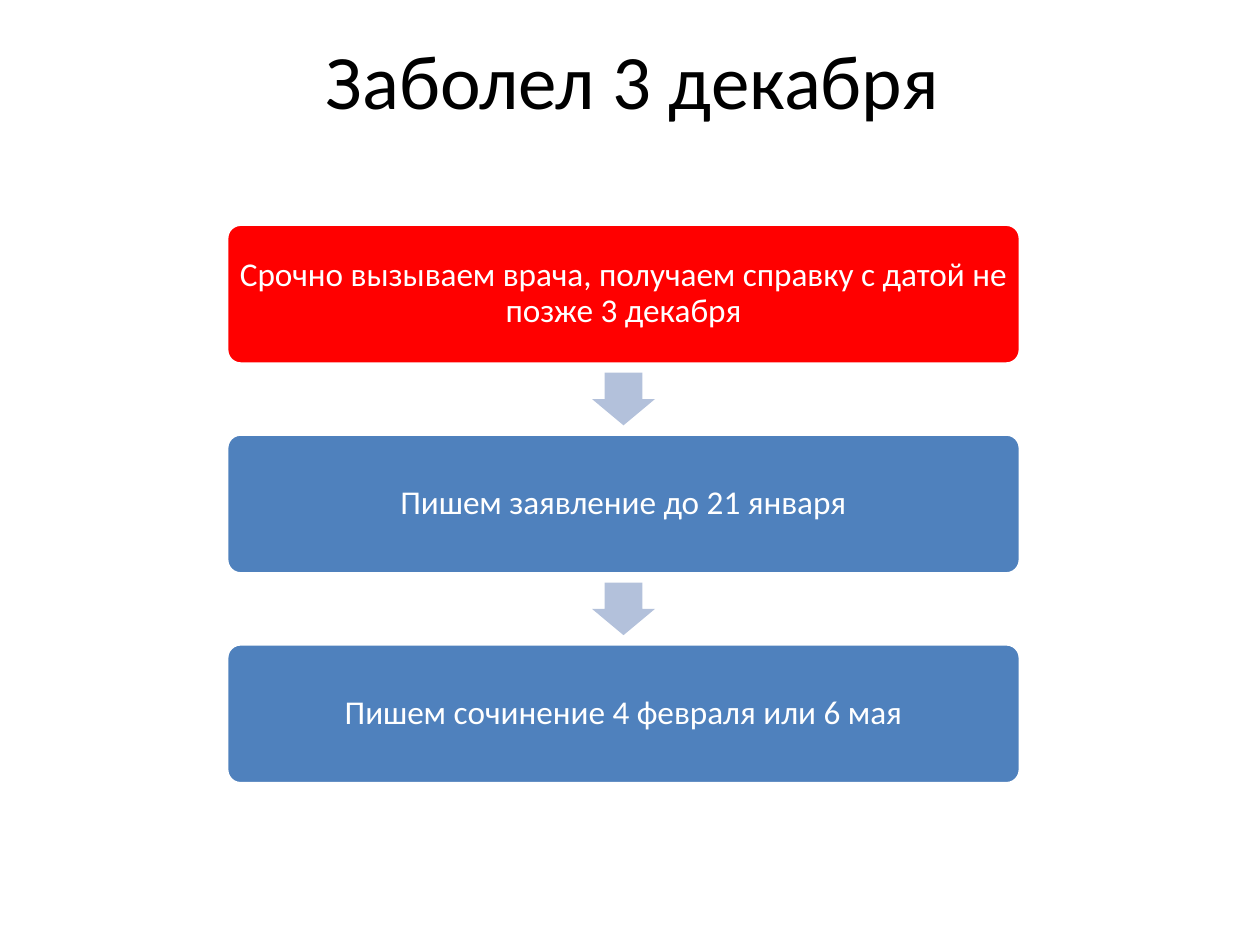
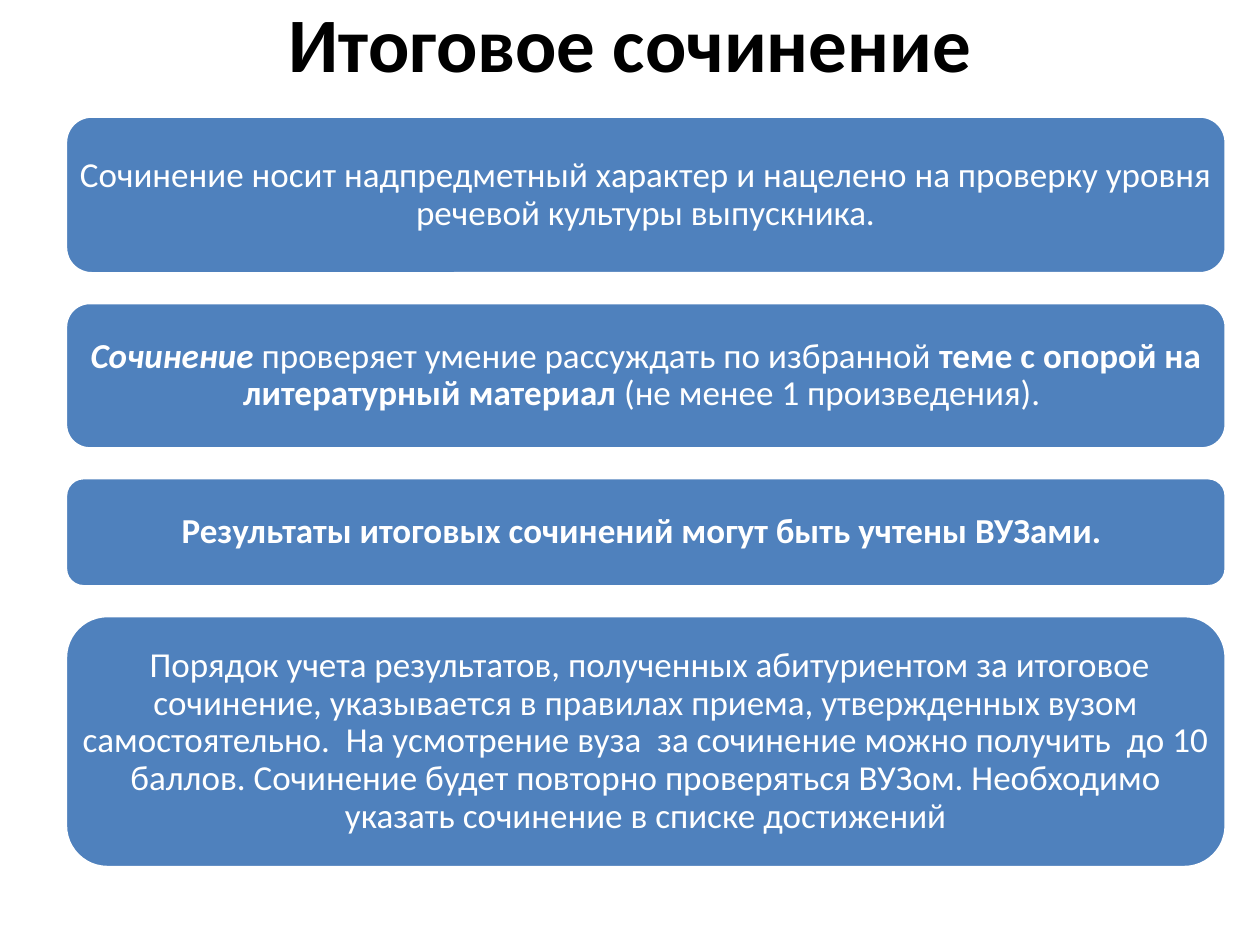
from dataclasses import dataclass

from pptx import Presentation
from pptx.dml.color import RGBColor
from pptx.enum.shapes import MSO_SHAPE
from pptx.enum.text import MSO_ANCHOR, PP_ALIGN
from pptx.util import Cm, Pt


@dataclass(frozen=True)
class Theme:
    font: str = "Calibri"
    black: str = "000000"
    white: str = "FFFFFF"
    blue: str = "4F81BD"
    red: str = "FF0000"
    arrow: str = "B3C1DB"
    title_size: int = 44
    step_size: int = 19
    fact_size: int = 20
    outline: int = 2


T = Theme()
CORNER_INSET = 0.29  # share of the corner radius that a rounded box takes from its text
TEXT_INSET = 0.2


def write(tf, text, size, color, bold=False, spacing=None):
    """Text is a string or a list of (string, bold, italic) runs."""
    tf.word_wrap = True
    tf.vertical_anchor = MSO_ANCHOR.MIDDLE
    p = tf.paragraphs[0]
    p.alignment = PP_ALIGN.CENTER
    p.line_spacing = spacing
    runs = [(text, bold, False)] if isinstance(text, str) else text
    for words, is_bold, is_italic in runs:
        r = p.add_run()
        r.text = words
        r.font.name, r.font.size = T.font, Pt(size)
        r.font.bold, r.font.italic = is_bold, is_italic
        r.font.color.rgb = RGBColor.from_string(color)


def add_title(s, text, box, bold=False):
    tb = s.shapes.add_textbox(*map(Cm, box))
    write(tb.text_frame, text, T.title_size, T.black, bold=bold)


def add_filled(s, kind, box, fill, adjustments):
    sp = s.shapes.add_shape(kind, *map(Cm, box))
    sp.shadow.inherit = False
    sp.fill.solid()
    sp.fill.fore_color.rgb = RGBColor.from_string(fill)
    sp.line.fill.background()
    for i, value in enumerate(adjustments):
        sp.adjustments[i] = value
    return sp


def add_card(s, text, box, size, fill=T.blue, corner=0.1667):
    sp = add_filled(s, MSO_SHAPE.ROUNDED_RECTANGLE, box, fill, [corner])
    sp.line.color.rgb = RGBColor.from_string(T.white)
    sp.line.width = Pt(T.outline)
    tf = sp.text_frame
    # The rounded corners already narrow the text area
    tf.margin_left = tf.margin_right = Cm(max(0, TEXT_INSET - CORNER_INSET * corner * box[3]))
    tf.margin_top = tf.margin_bottom = Cm(0.1)
    write(tf, text, size, T.white, spacing=0.9)


def add_steps(s, steps, box):
    """Equal cards from top to bottom, with an arrow centred in each gap."""
    left, top, width, height = box
    card_h = height / (len(steps) * 1.5 - 0.5)
    gap = card_h / 2
    arrow_w, arrow_h = 1.27, 1.06
    for i, (text, fill) in enumerate(steps):
        y = top + i * (card_h + gap)
        add_card(s, text, (left, y, width, card_h), T.step_size, fill, corner=0.1)
        if i:
            arrow = (left + (width - arrow_w) / 2, y - (gap + arrow_h) / 2, arrow_w, arrow_h)
            add_filled(s, MSO_SHAPE.DOWN_ARROW, arrow, T.arrow, [0.6, 0.5])


def add_facts(s, facts, box, gap=0.58):
    """Cards of given heights, stacked with equal gaps."""
    left, y, width = box
    for text, height in facts:
        add_card(s, text, (left, y, width, height), T.fact_size)
        y += height + gap


def illness_slide(s):
    add_title(s, "Заболел 3 декабря ", (1.5, 0, 22.86, 3.18))
    add_steps(s, [
        ("Срочно вызываем врача, получаем справку с датой не позже 3 декабря", T.red),
        ("Пишем заявление до 21 января", T.blue),
        ("Пишем сочинение 4 февраля или 6 мая", T.blue),
    ], (4.57, 4.52, 16, 11.28))


def essay_slide(s):
    add_title(s, "Итоговое сочинение", (0.71, -0.48, 24, 2.64), bold=True)
    add_facts(s, [
        ([("Сочинение носит надпредметный характер и нацелено на проверку уровня "
           "речевой культуры выпускника", False, False), (".", False, True)], 3.18),
        ([("Сочинение ", True, True),
          ("проверяет умение рассуждать по избранной ", False, False),
          ("теме с опорой на литературный материал ", True, False),
          ("(не менее 1 произведения). ", False, False)], 2.95),
        ([("Результаты итоговых сочинений могут быть учтены ВУЗами. ", True, False)], 2.2),
        ([(" ", True, False),
          ("Порядок учета результатов, полученных абитуриентом за итоговое сочинение, "
           "указывается в правилах приема, утвержденных вузом самостоятельно.  "
           "На усмотрение вуза  за сочинение можно получить  до 10 баллов. "
           "Сочинение будет повторно проверяться ВУЗом. "
           "Необходимо указать сочинение в списке достижений", False, False)], 5.08),
    ], (1.32, 2.34, 23.4))


def main():
    prs = Presentation()
    prs.slide_width, prs.slide_height = Cm(25.4), Cm(19.05)
    blank = prs.slide_layouts[6]
    for build in (illness_slide, essay_slide):
        build(prs.slides.add_slide(blank))
    prs.save("out.pptx")


if __name__ == "__main__":
    main()
